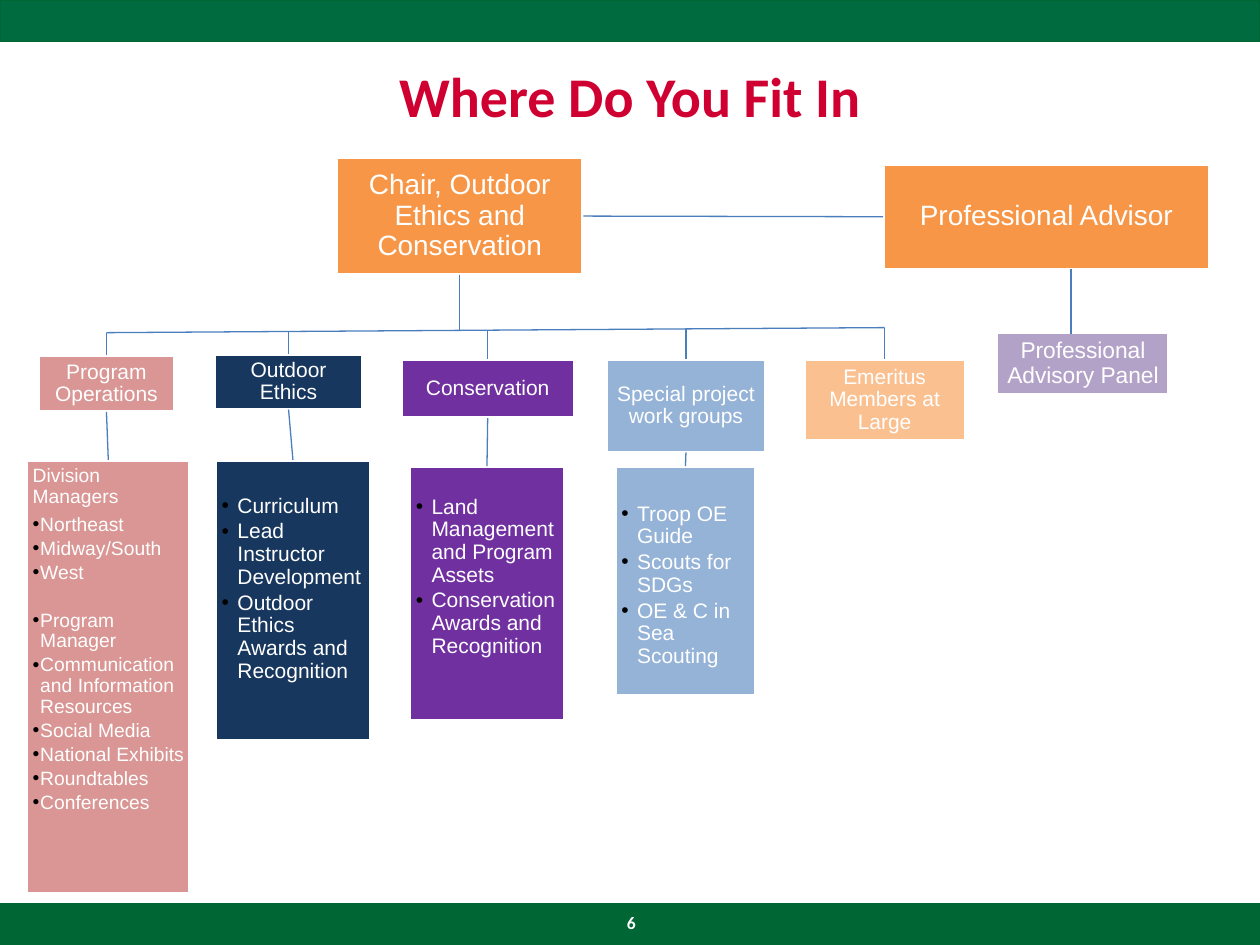
from dataclasses import dataclass

from lxml.etree import SubElement
from pptx import Presentation
from pptx.dml.color import RGBColor
from pptx.enum.shapes import MSO_CONNECTOR as Link, MSO_SHAPE as Shape
from pptx.enum.text import MSO_ANCHOR as Anchor, PP_ALIGN as Align
from pptx.oxml.ns import qn
from pptx.util import Pt

TOP, LEFT, BOTTOM, RIGHT = range(4)


@dataclass(frozen=True)
class Theme:
    band_top: str = "006B3F"
    band: str = "006633"
    title: str = "CF0031"
    white: str = "FFFFFF"
    bullet: str = "000000"
    line: str = "4B7EBC"
    lead: str = "F79646"
    panel: str = "B3A2C7"
    emeritus: str = "FAC090"
    operations: str = "D99694"
    ethics: str = "17375E"
    conservation: str = "7030A0"
    projects: str = "95B3D7"
    heading_font: str = "Calibri"
    body_font: str = "Arial"
    title_size: int = 32
    lead_size: int = 16
    panel_size: float = 13
    body_size: int = 12
    small_size: int = 11
    number_size: int = 10


THEME = Theme()

# Each branch: colour, header box, header text, list box, list top inset,
# text size, bullet indent, intro line, bullet groups
BRANCHES = [
    (THEME.operations, (21.6, 203, 78.5, 32.4), "Program Operations",
     (15.1, 262.8, 93.6, 247.7), 3.6, THEME.small_size, 4.3, "Division Managers",
     [["Northeast", "Midway/South", "West"],
      ["Program Manager", "Communication and Information Resources",
       "Social Media", "National Exhibits", "Roundtables", "Conferences"]]),
    (THEME.ethics, (122.4, 202.3, 85, 31.7), "Outdoor Ethics",
     (123.1, 262.8, 88.6, 160.6), 20, THEME.body_size, 9, None,
     [["Curriculum", "Lead Instructor Development",
       "Outdoor Ethics Awards and Recognition"]]),
    (THEME.conservation, (229, 205.2, 99.4, 33.8), "Conservation",
     (234, 266.4, 88.6, 145.4), 17, THEME.body_size, 9, None,
     [["Land Management and Program Assets",
       "Conservation Awards and Recognition"]]),
    (THEME.projects, (346.3, 205.2, 91.4, 53.3), "Special project work groups",
     (351.4, 266.4, 80.6, 131), 21, THEME.body_size, 9, None,
     [["Troop OE Guide", "Scouts for SDGs", "OE & C in Sea Scouting"]]),
]


def apply(target, values):
    for name, value in values.items():
        setattr(target, name, value)


def write(para, text, size, color=THEME.white, font=THEME.body_font, bold=False):
    span = para.add_run()
    span.text = text
    apply(span.font, {"size": Pt(size), "name": font, "bold": bold})
    span.font.color.rgb = RGBColor.from_string(color)


def add_box(page, box, fill, line=THEME.white, width=2):
    shape = page.shapes.add_shape(Shape.RECTANGLE, *map(Pt, box))
    shape.shadow.inherit = False
    shape.fill.solid()
    shape.fill.fore_color.rgb = RGBColor.from_string(fill)
    shape.line.color.rgb = RGBColor.from_string(line)
    shape.line.width = Pt(width)
    return shape


def set_frame(frame, anchor, inset, top=None):
    apply(frame, {
        "word_wrap": True, "vertical_anchor": anchor,
        "margin_left": Pt(inset), "margin_right": Pt(inset), "margin_bottom": Pt(inset),
        "margin_top": Pt(inset if top is None else top),
    })


def add_role(page, box, text, fill, size=THEME.body_size, inset=3.6):
    shape = add_box(page, box, fill)
    set_frame(shape.text_frame, Anchor.MIDDLE, inset)
    para = shape.text_frame.paragraphs[0]
    apply(para, {"alignment": Align.CENTER, "line_spacing": 0.9})
    write(para, text, size)
    return shape


def add_line(page, start, end, source=None, target=None):
    """Draw a line; source and target are (shape, side) pairs to join."""
    line = page.shapes.add_connector(Link.STRAIGHT, *map(Pt, (*start, *end)))
    line.line.color.rgb = RGBColor.from_string(THEME.line)
    line.line.width = Pt(0.75)
    SubElement(line._element.spPr, qn("a:effectLst"))
    if source:
        line.begin_connect(*source)
    if target:
        line.end_connect(*target)


def add_bullet(para, indent):
    props = para._p.get_or_add_pPr()
    props.set("marL", str(Pt(indent)))
    props.set("indent", str(-Pt(indent)))
    color = SubElement(props, qn("a:buClr"))
    SubElement(color, qn("a:srgbClr")).set("val", THEME.bullet)
    SubElement(props, qn("a:buFont")).set("typeface", THEME.body_font)
    SubElement(props, qn("a:buChar")).set("char", "•")


def add_duties(page, box, fill, top, size, indent, intro, groups):
    shape = add_box(page, box, fill)
    frame = shape.text_frame
    set_frame(frame, Anchor.TOP, 3.6, top)
    frame.margin_right = Pt(3)
    para = frame.paragraphs[0]
    entries = [(intro, False, 0)] if intro else []
    for group_index, group in enumerate(groups):
        for index, text in enumerate(group):
            entries.append((text, True, 13.4 if group_index and not index else 0))
    for index, (text, bulleted, gap) in enumerate(entries):
        para = frame.add_paragraph() if index else para
        apply(para, {"alignment": Align.LEFT, "line_spacing": 0.9,
                     "space_before": Pt(gap), "space_after": Pt(1.8 if bulleted else 4.3)})
        if bulleted:
            add_bullet(para, indent)
        write(para, text, size)
    return shape


def add_label(page, box, text, size, color, inset):
    frame = page.shapes.add_textbox(*map(Pt, box)).text_frame
    set_frame(frame, Anchor.MIDDLE, inset)
    para = frame.paragraphs[0]
    para.alignment = Align.CENTER
    write(para, text, size, color, THEME.heading_font, True)


def add_page_frame(page, width, height):
    band = 23.8
    add_box(page, (0, 0, width, band), THEME.band_top, THEME.band, 0.75)
    add_box(page, (0, height - band, width, band), THEME.band, THEME.band, 0.75)
    add_label(page, (36, 30.2, width - 72, 48.2), "Where Do You Fit In",
              THEME.title_size, THEME.title, 3.6)
    add_label(page, (350.6, 517, 20.2, 20.2), "6", THEME.number_size, THEME.white, 3.6)


def add_leads(page):
    chair = add_role(page, (192.2, 90, 141.1, 67), "Chair, Outdoor Ethics and Conservation",
                     THEME.lead, THEME.lead_size, 5)
    advisor = add_role(page, (504.7, 93.6, 186.5, 60.5), "Professional Advisor",
                       THEME.lead, THEME.lead_size, 5)
    add_role(page, (569.5, 190.1, 98.6, 35.3), "Professional Advisory Panel",
             THEME.panel, THEME.panel_size)
    add_line(page, (333, 124), (505, 124), (chair, RIGHT), (advisor, LEFT))
    add_line(page, (612, 154), (612, 190.8))
    return chair


def add_branches(page, chair):
    heads = []
    for fill, head_box, title, list_box, *content in BRANCHES:
        head = add_role(page, head_box, title, fill)
        duties = add_duties(page, list_box, fill, *content)
        add_line(page, (0, 0), (0, 0), (head, BOTTOM), (duties, TOP))
        heads.append(head)
    heads.append(add_role(page, (459.4, 205.2, 92.2, 46.8), "Emeritus Members at Large",
                          THEME.emeritus))

    # Gently rising bus line, with a drop to the top of each header
    def middle(shape):
        return (shape.left + shape.width / 2) / Pt(1)

    first, last = middle(heads[0]), middle(heads[-1])

    def bus_point(shape):
        x = middle(shape)
        return x, 190.1 - 2.9 * (x - first) / (last - first)

    add_line(page, bus_point(heads[-1]), bus_point(heads[0]))
    add_line(page, (0, 0), bus_point(chair), (chair, BOTTOM))
    for head in heads:
        add_line(page, bus_point(head), (0, 0), None, (head, TOP))


def main():
    deck = Presentation()
    apply(deck, {"slide_width": Pt(720), "slide_height": Pt(540)})
    page = deck.slides.add_slide(deck.slide_layouts[6])
    add_page_frame(page, 720, 540)
    add_branches(page, add_leads(page))
    deck.save("out.pptx")


if __name__ == "__main__":
    main()
